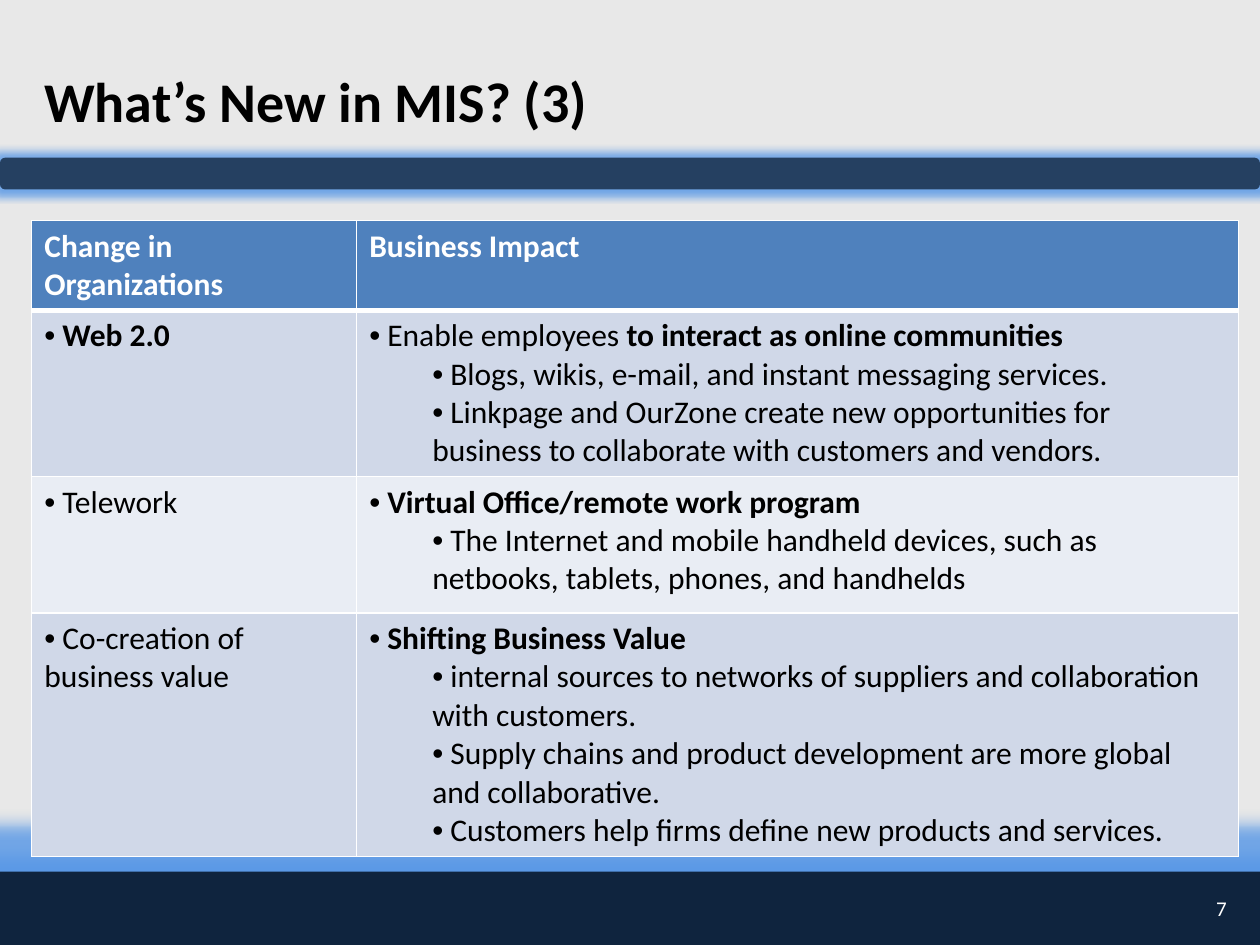
from lxml.etree import SubElement
from pptx import Presentation
from pptx.dml.color import RGBColor
from pptx.enum.shapes import MSO_SHAPE
from pptx.enum.text import MSO_ANCHOR, PP_ALIGN
from pptx.oxml.ns import qn
from pptx.util import Cm, Pt

FONT = "Calibri"
BACKGROUND = RGBColor(0xE8, 0xE8, 0xE8)
NAVY = RGBColor(0x0F, 0x24, 0x3E)
DARK_BLUE = RGBColor(0x25, 0x40, 0x61)
GLOW_BLUE = RGBColor(0x55, 0x96, 0xE6)
HEADER_BLUE = RGBColor(0x4F, 0x81, 0xBD)
BAND_DARK = RGBColor(0xD0, 0xD8, 0xE8)
BAND_LIGHT = RGBColor(0xE9, 0xED, 0xF4)
BLACK = RGBColor(0, 0, 0)
WHITE = RGBColor(0xFF, 0xFF, 0xFF)

COLUMN_WIDTHS = [Cm(6.55), Cm(17.78)]
ROW_HEIGHTS = [Cm(1.8), Cm(3.35), Cm(2.75), Cm(4.9)]

HEADINGS = ["Change in Organizations", "Business Impact"]

# Each cell lists its points as (level, runs); a run is (text, bold)
CHANGES = [
    ([(0, [(" Web 2.0", True)])],
     [(0, [(" Enable employees ", False),
           ("to interact as online communities", True)]),
      (1, [(" Blogs, wikis, e-mail, and instant messaging services.", False)]),
      (1, [(" Linkpage and OurZone create new opportunities for business "
            "to collaborate with customers and vendors.", False)])]),
    ([(0, [(" Telework", False)])],
     [(0, [(" Virtual Office/remote work program", True)]),
      (1, [(" The Internet and mobile handheld devices, such as netbooks, "
            "tablets, phones, and handhelds", False)])]),
    ([(0, [(" Co-creation of business value", False)])],
     [(0, [(" Shifting Business Value", True)]),
      (1, [(" internal sources to networks of suppliers and collaboration "
            "with customers.", False)]),
      (1, [(" Supply chains and product development are more global and "
            "collaborative.", False)]),
      (1, [(" Customers help firms define new products and services.",
            False)])]),
]


def add_run(paragraph, text, size, color, bold=False):
    run = paragraph.add_run()
    run.text = text
    run.font.name = FONT
    run.font.size = Pt(size)
    run.font.bold = bold
    run.font.color.rgb = color


def add_bar(slide, preset, top, height, color, glow_radius):
    bar = slide.shapes.add_shape(preset, 0, top, Cm(25.4), height)
    bar.shadow.inherit = False
    bar.fill.solid()
    bar.fill.fore_color.rgb = color
    bar.line.fill.background()
    effects = bar.element.spPr.find(qn("a:effectLst"))
    glow = SubElement(effects, qn("a:glow"), rad=str(glow_radius))
    tint = SubElement(glow, qn("a:srgbClr"), val=str(GLOW_BLUE))
    SubElement(tint, qn("a:alpha"), val="80000")


def add_label(slide, left, top, width, height, text, size, color,
              bold=False, align=PP_ALIGN.LEFT):
    label = slide.shapes.add_textbox(left, top, width, height)
    frame = label.text_frame
    frame.word_wrap = True
    frame.vertical_anchor = MSO_ANCHOR.MIDDLE
    paragraph = frame.paragraphs[0]
    paragraph.alignment = align
    add_run(paragraph, text, size, color, bold)


def style_cell(cell, color, top=1, bottom=1):
    properties = cell._tc.get_or_add_tcPr()
    for side, width in (("L", 1), ("R", 1), ("T", top), ("B", bottom)):
        border = SubElement(properties, qn(f"a:ln{side}"), w=str(Pt(width)))
        fill = SubElement(border, qn("a:solidFill"))
        SubElement(fill, qn("a:srgbClr"), val=str(WHITE))
    cell.fill.solid()
    cell.fill.fore_color.rgb = color


def write_points(cell, points):
    frame = cell.text_frame
    for index, (level, runs) in enumerate(points):
        point = frame.add_paragraph() if index else frame.paragraphs[0]
        point.level = level
        properties = point._p.get_or_add_pPr()
        properties.set("marL", str(level * Cm(1.27)))
        properties.set("indent", "0")
        SubElement(properties, qn("a:buFont"), typeface="Arial")
        SubElement(properties, qn("a:buChar"), char="•")
        for text, bold in runs:
            add_run(point, text, 18, BLACK, bold)


def add_changes_table(slide):
    table = slide.shapes.add_table(
        len(ROW_HEIGHTS), len(COLUMN_WIDTHS), Cm(0.64), Cm(4.45),
        sum(COLUMN_WIDTHS), sum(ROW_HEIGHTS)).table
    for column, width in zip(table.columns, COLUMN_WIDTHS):
        column.width = width
    for row, height in zip(table.rows, ROW_HEIGHTS):
        row.height = height

    # Heading row
    for cell, heading in zip(table.rows[0].cells, HEADINGS):
        style_cell(cell, HEADER_BLUE, bottom=3)
        add_run(cell.text_frame.paragraphs[0], heading, 18, WHITE, True)

    # Banded body rows
    for number, change in enumerate(CHANGES, start=1):
        band = BAND_DARK if number % 2 else BAND_LIGHT
        for cell, points in zip(table.rows[number].cells, change):
            style_cell(cell, band, top=3 if number == 1 else 1)
            write_points(cell, points)


def main():
    presentation = Presentation()
    presentation.slide_width = Cm(25.4)
    presentation.slide_height = Cm(19.05)
    slide = presentation.slides.add_slide(presentation.slide_layouts[6])
    slide.background.fill.solid()
    slide.background.fill.fore_color.rgb = BACKGROUND

    # Footer band and title rule
    add_bar(slide, MSO_SHAPE.RECTANGLE, Cm(17.57), Cm(1.48), NAVY, Pt(18))
    add_bar(slide, MSO_SHAPE.ROUNDED_RECTANGLE, Cm(3.18), Cm(0.64),
            DARK_BLUE, Pt(8))

    add_changes_table(slide)

    # Title and page number
    add_label(slide, Cm(0.64), Cm(1.06), Cm(22.02), Cm(1.9),
              "What’s New in MIS? (3)", 32, BLACK, bold=True)
    add_label(slide, Cm(23.92), Cm(17.78), Cm(1.06), Cm(1.06),
              "7", 12, WHITE, align=PP_ALIGN.RIGHT)

    presentation.save("out.pptx")


if __name__ == "__main__":
    main()
